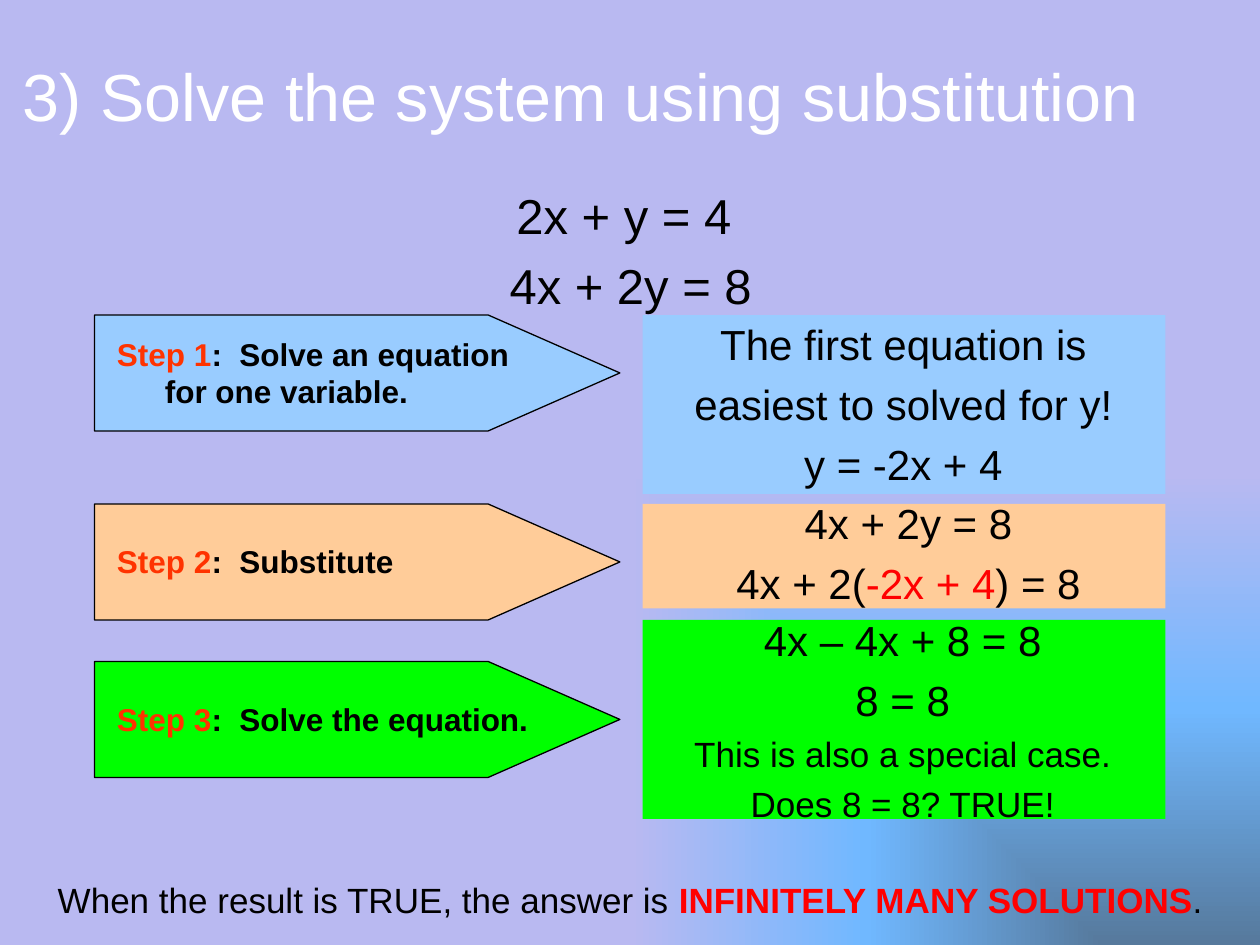
from pptx import Presentation
from pptx.dml.color import RGBColor
from pptx.enum.shapes import MSO_SHAPE as Shape
from pptx.enum.text import MSO_ANCHOR as Anchor, MSO_AUTO_SIZE as Fit, PP_ALIGN as Align
from pptx.oxml import parse_xml
from pptx.oxml.ns import nsdecls, qn
from pptx.util import Inches, Pt

FONT = "Arial"
COLORS = {
    "white": "FFFFFF", "black": "000000", "red": "FF0000", "step": "FF3300",
    "blue": "99CCFF", "peach": "FFCC99", "green": "00FF00",
    "slate": "56799C", "sky": "70B8FF", "lilac": "B9B9F1",
}


def rgb(name):
    return RGBColor.from_string(COLORS[name])


def place(shape, box):
    shape.left, shape.top, shape.width, shape.height = map(Inches, box)


def write(frame, lines, gap=True, hang=True, align=Align.CENTER):
    """Fill a frame; each line is (size, [(text, color, bold), ...])."""
    for i, (size, runs) in enumerate(lines):
        para = frame.paragraphs[0] if i == 0 else frame.add_paragraph()
        para.alignment = align
        para.font.name, para.font.size = FONT, Pt(size)
        para.space_before = Pt(round(size * 0.23, 1) if gap else 0)
        props = para._p.get_or_add_pPr()
        if hang:
            props.set("marL", str(Inches(0.38)))
            props.set("indent", str(-Inches(0.38)))
        for text, color, bold in runs:
            run = para.add_run()
            run.text = text
            run.font.color.rgb, run.font.bold = rgb(color), bold


def plain(size, *texts):
    return [(size, [(text, "black", False)]) for text in texts]


def add_text(slide, box, lines, **style):
    frame = slide.shapes.add_textbox(*map(Inches, box)).text_frame
    frame.word_wrap = True
    frame.vertical_anchor = Anchor.MIDDLE
    write(frame, lines, **style)
    return frame


def add_block(slide, kind, box, color, line=False):
    block = slide.shapes.add_shape(kind, *map(Inches, box))
    block.shadow.inherit = False
    block.fill.solid()
    block.fill.fore_color.rgb = rgb(color)
    if line:
        block.line.color.rgb, block.line.width = rgb("black"), Pt(0.75)
    else:
        block.line.fill.background()
    return block


def paint_back(slide):
    slide.background.fill.solid()
    props = slide.element.find(".//" + qn("p:bgPr"))
    stops = "".join(
        f'<a:gs pos="{pos}"><a:srgbClr val="{COLORS[name]}"/></a:gs>'
        for pos, name in ((0, "slate"), (50000, "sky"), (100000, "lilac")))
    props.replace(props[0], parse_xml(
        f'<a:gradFill rotWithShape="0" {nsdecls("a")}><a:gsLst>{stops}</a:gsLst>'
        '<a:path path="rect"><a:fillToRect l="100000" t="100000"/></a:path>'
        '</a:gradFill>'))


def add_title(slide, box):
    title = slide.shapes.title
    place(title, box)
    frame = title.text_frame
    frame.auto_size, frame.vertical_anchor = Fit.NONE, Anchor.MIDDLE
    text = "3) Solve the system using substitution"
    write(frame, [(38, [(text, "white", False)])],
          gap=False, hang=False, align=Align.LEFT)


def add_system(slide, box):
    body = slide.placeholders[1]
    place(body, box)
    frame = body.text_frame
    frame.auto_size = Fit.NONE
    write(frame, plain(28, "2x + y = 4 ", "4x + 2y = 8"))
    for para in frame.paragraphs:
        para._p.get_or_add_pPr().append(parse_xml(f'<a:buNone {nsdecls("a")}/>'))


def add_step(slide, box, num, text, color, gap):
    left, top, width, height = box
    arrow = add_block(slide, Shape.PENTAGON, box, color, line=True)
    arrow.adjustments[0] = 1.136
    runs = [(f"Step {num}", "step", True), (f":  {text}", "black", True)]
    add_text(slide, (left + 0.08, top + 0.08, width - 0.59, height - 0.17),
             [(18, runs)], gap=gap, align=Align.LEFT)


def add_work(slide, box, color, area, lines):
    add_block(slide, Shape.RECTANGLE, box, color)
    add_text(slide, area, lines)


def add_result(slide, box):
    frame = add_text(slide, box, [(20, [
        ("When the result is TRUE, the answer is ", "black", False),
        ("INFINITELY MANY SOLUTIONS", "red", True),
        (".", "black", False),
    ])], gap=False, hang=False, align=Align.LEFT)
    frame.word_wrap = False
    frame.auto_size = Fit.SHAPE_TO_FIT_TEXT
    frame.vertical_anchor = Anchor.TOP


def main():
    deck = Presentation()
    deck.slide_width, deck.slide_height = Inches(10), Inches(7.5)
    slide = deck.slides.add_slide(deck.slide_layouts[1])
    paint_back(slide)
    add_title(slide, (0.08, 0.25, 9.08, 1))
    add_system(slide, (0.67, 1.42, 8.67, 5))

    # Step arrows: top, text, color, gap above the text
    steps = [(2.5, "Solve an equation for one variable.", "blue", True),
             (4, "Substitute", "peach", False),
             (5.25, "Solve the equation.", "green", False)]
    for num, (top, text, color, gap) in enumerate(steps, 1):
        add_step(slide, (0.75, top, 4.17, 0.92), num, text, color, gap)

    # Worked answers: top, height, color, text area, lines
    swap = (24, [("4x + 2(", "black", False), ("-2x + 4", "red", False),
                 (") = 8", "black", False)])
    works = [
        (2.5, 1.42, "blue", (5.17, 2.58, 4, 1.25),
         plain(24, "The first equation is", "easiest to solved for y!", "y = -2x + 4")),
        (4, 0.83, "peach", (5.17, 4, 4.08, 0.78), plain(24, "4x + 2y = 8") + [swap]),
        (4.92, 1.58, "green", (5.08, 4.96, 4.17, 1.5),
         plain(24, "4x – 4x + 8 = 8", "8 = 8")
         + plain(20, "This is also a special case.", "Does 8 = 8? TRUE!")),
    ]
    for top, height, color, area, lines in works:
        add_work(slide, (5.1, top, 4.15, height), color, area, lines)

    add_result(slide, (0.36, 6.92, 9.31, 0.43))
    deck.save("out.pptx")


if __name__ == "__main__":
    main()
